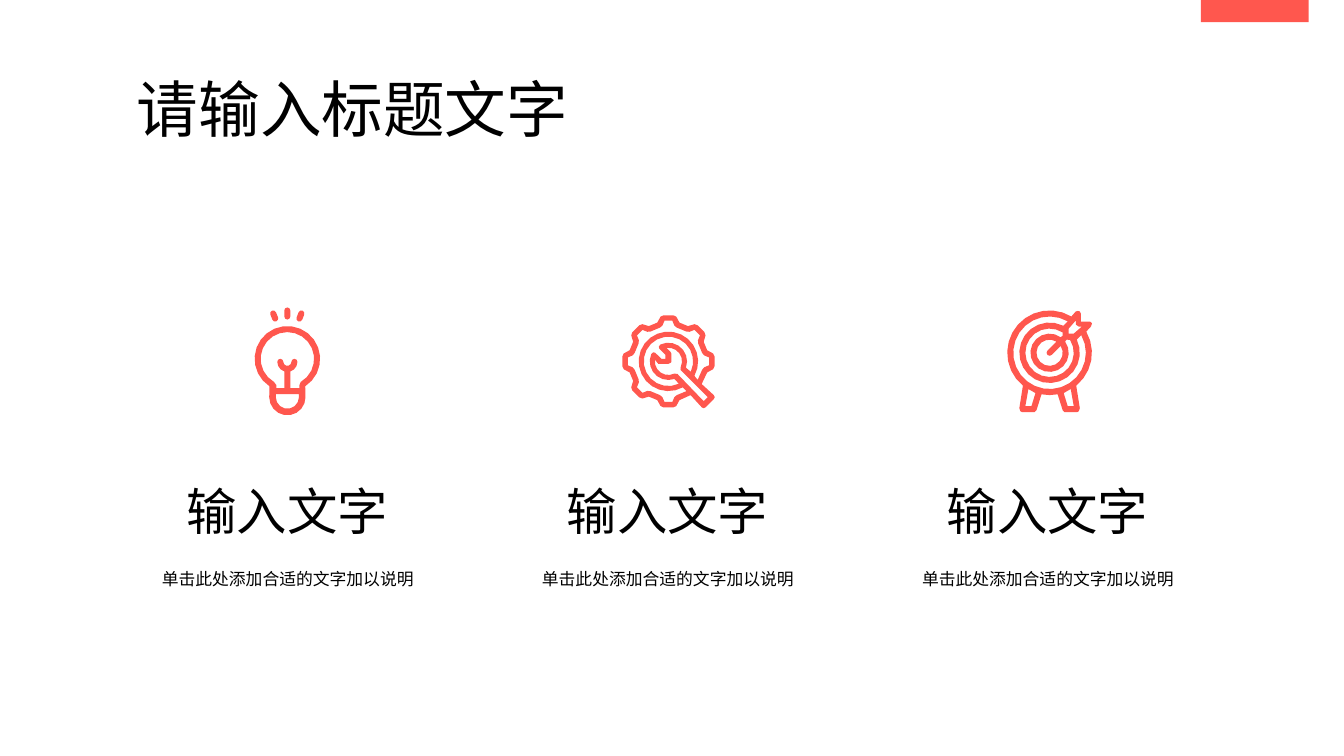
from dataclasses import dataclass
from math import acos, atan2, ceil, cos, degrees, radians, sin

from pptx import Presentation
from pptx.dml.color import RGBColor as RGB
from pptx.enum.shapes import MSO_SHAPE as SHAPE
from pptx.enum.text import MSO_AUTO_SIZE as FIT, PP_ALIGN as ALIGN
from pptx.util import Pt

PX = 9144  # EMU per px, 100 px to the inch
TOLERANCE = 0.3  # largest gap in px between an arc and its chords


@dataclass(frozen=True)
class Theme:
    accent: RGB = RGB(0xFF, 0x57, 0x4E)
    ink: RGB = RGB(0, 0, 0)
    title_font: str = "Calibri"
    body_font: str = "Noto Sans CJK JP"
    title_size: int = 44
    heading_size: int = 36
    body_size: int = 12


THEME = Theme()


# Outline helpers: angles in degrees, clockwise from the right
def polar(center, radius, angle):
    a = radians(angle)
    return center[0] + radius * cos(a), center[1] + radius * sin(a)


def arc(center, radius, start, end):
    widest = 2 * degrees(acos(1 - TOLERANCE / radius))
    steps = ceil(abs(end - start) / widest)
    return [polar(center, radius, start + (end - start) * i / steps)
            for i in range(steps + 1)]


def capsule(start, end, radius):
    a = degrees(atan2(end[1] - start[1], end[0] - start[0]))
    return arc(end, radius, a - 90, a + 90) + arc(start, radius, a + 90, a + 270)


def gear_teeth(center, profile):
    return [polar(center, radius, tooth + offset)
            for tooth in range(90, 361, 45) for offset, radius in profile]


def mirror(points, axis):
    return [(2 * axis - x, y) for x, y in points]


# Slide elements
def paint(s):
    s.fill.solid()
    s.fill.fore_color.rgb = THEME.accent
    s.line.fill.background()
    s.shadow.inherit = False


def add_outline(shapes, contours):
    builder = None
    for contour in contours:
        (x, y), *rest = [(px * PX, py * PX) for px, py in contour]
        if builder is None:
            builder = shapes.build_freeform(x, y, scale=1.0)
        else:
            builder.move_to(x, y)
        builder.add_line_segments(rest, close=True)
    paint(builder.convert_to_shape())


def add_bar(shapes, x, y, w, h):
    paint(shapes.add_shape(SHAPE.RECTANGLE, x * PX, y * PX, w * PX, h * PX))


def add_text(shapes, text, x, y, w, h, size, font, align=ALIGN.LEFT):
    tf = shapes.add_textbox(x * PX, y * PX, w * PX, h * PX).text_frame
    tf.word_wrap = True
    tf.auto_size = FIT.SHAPE_TO_FIT_TEXT
    p = tf.paragraphs[0]
    p.text = text
    p.alignment = align
    p.font.size = Pt(size)
    p.font.name = font
    p.font.color.rgb = THEME.ink


# Icons
def add_bulb(shapes):
    glass, base, filament = (285, 356), (285, 394), (285, 359)
    body = arc(glass, 32.5, 123, 417) + arc(base, 18, 0, 180)
    socket = arc(base, 11.5, 0, 180) + [(273.5, 391), (296.5, 391)]
    inside = (
        arc(glass, 26.5, 120, 420)
        + [(297, 382), (297, 385), (288, 385)]
        + arc(filament, 10, 73, 0)
        + arc((292, 359), 3, 0, -180)
        + arc(filament, 4, 0, 180)
        + arc((278, 359), 3, 0, -180)
        + arc(filament, 10, 180, 107)
        + [(282, 385), (274, 385), (274, 382)]
    )
    group = shapes.add_group_shape()
    add_outline(group.shapes, [body, socket, inside])
    for top, bottom in (((285, 308), (285, 314)),
                        ((271, 311), (273, 316)),
                        ((299, 311), (297, 316))):
        add_outline(group.shapes, [capsule(top, bottom, 3)])


def add_gear(shapes):
    c = (663, 358.5)
    outer_tooth = [(-16, 40), (-10, 45), (-6, 46), (6, 46), (10, 45), (16, 40)]
    inner_tooth = [(-14, 34.5), (-9.5, 36), (-5.5, 40.5),
                   (5.5, 40.5), (9.5, 36), (14, 34.5)]
    rim = gear_teeth(c, outer_tooth) + [
        (696, 381), (708, 392), (709, 394), (708, 396),
        (700, 404), (698, 405), (696, 404), (685, 392)]
    band = (gear_teeth(c, inner_tooth) + [(692, 377)]
            + arc(c, 29.5, 29, -299) + [(681, 388)])
    wrench_edge = (
        arc(c, 24.5, 25, -295)
        + arc(c, 18.5, 71, 203)
        + [(648, 349.5), (650, 350), (656, 356), (660, 356),
           (660, 352), (654, 346), (653.5, 344)]
        + arc(c, 18.5, -116, 20)
    )
    wrench = (
        [(698, 398), (672, 371)]
        + arc(c, 13.5, 64, 187)
        + [(653, 361), (655, 361), (663, 361), (665, 360), (666, 359),
           (666, 351), (665, 349)]
        + arc(c, 13.5, -98, 25)
        + [(675, 367), (702, 394)]
    )
    add_outline(shapes, [rim, band, wrench_edge, wrench])


def add_target(shapes):
    c = (1041, 350)
    leg = [(1071, 405), (1070, 408), (1068, 409),
           (1056, 409), (1054, 407)]
    leg_hole = [(1059, 403), (1065, 403), (1062, 386), (1055, 390)]
    board = (
        arc(c, 42, -30, 51) + leg
        + arc(c, 42, 79, 101) + mirror(leg[::-1], c[0])
        + arc(c, 42, 129, 301)
        + [(1067, 309), (1069, 308.5), (1071, 309), (1072, 311), (1072, 319),
           (1080, 319), (1082, 319.5), (1083, 321), (1082, 324)]
    )
    outer_band = (arc(c, 36, -29, 300) + [(1055, 323)]
                  + arc(c, 30, 296, -26))
    inner_band = (arc(c, 24, -32, 303) + [(1054, 333)]
                  + arc(c, 19, 306, -36) + [(1058, 337)])
    bullseye = arc(c, 13, -32, 302) + arc(c, 3, 225, 45)
    feather = [(1070, 324), (1073, 324), (1065, 331), (1060, 331),
               (1060, 326), (1067, 318), (1067, 322)]
    add_outline(shapes, [board, leg_hole, mirror(leg_hole, c[0]),
                         outer_band, inner_band, bullseye, feather])


def add_column(shapes, x, add_icon):
    add_icon(shapes)
    add_text(shapes, "单击此处添加合适的文字加以说明", x, 559, 287, 30,
             THEME.body_size, THEME.body_font, ALIGN.CENTER)
    add_text(shapes, "输入文字", x + 23, 471, 240, 71,
             THEME.heading_size, THEME.body_font, ALIGN.CENTER)


def main():
    prs = Presentation()
    prs.slide_width, prs.slide_height = 1333 * PX, 750 * PX
    shapes = prs.slides.add_slide(prs.slide_layouts[6]).shapes

    # Header
    add_bar(shapes, 1191, 0, 107, 22)
    add_text(shapes, "请输入标题文字", 126, 65, 477, 84,
             THEME.title_size, THEME.title_font)

    # Three equal columns
    for i, add_icon in enumerate((add_bulb, add_gear, add_target)):
        add_column(shapes, 142 + 377 * i, add_icon)

    prs.save("out.pptx")


if __name__ == "__main__":
    main()
